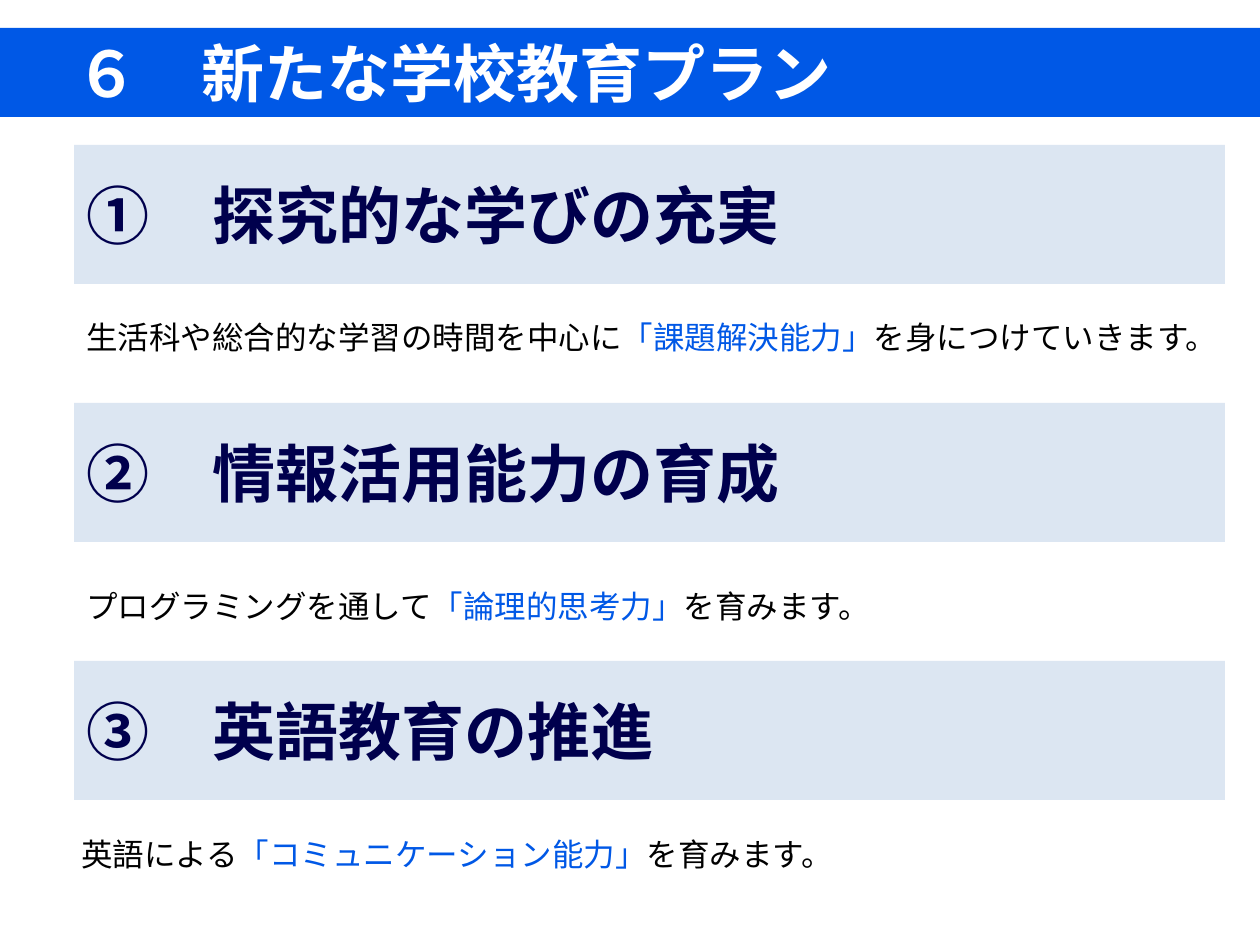
from pptx import Presentation
from pptx import util as u
from pptx.dml.color import RGBColor
from pptx.enum import shapes, text

BLUE = RGBColor(0x00, 0x58, 0xE6)
PALE = RGBColor(0xDC, 0xE6, 0xF2)
NAVY = RGBColor(0x00, 0x00, 0x4D)
WHITE = RGBColor(0xFF, 0xFF, 0xFF)
BLACK = RGBColor(0x00, 0x00, 0x00)

TITLE = "　６　新たな学校教育プラン"
# heading, (lead, key phrase, ending), body left, body top, body font
PLANS = [
    ("①　探究的な学びの充実",
     ("生活科や総合的な学習の時間を中心に", "「課題解決能力」", "を身につけていきます。"),
     74, 312, "Arial"),
    ("②　情報活用能力の育成",
     ("プログラミングを通して", "「論理的思考力」", "を育みます。"),
     74, 581, "Calibri"),
    ("③　英語教育の推進",
     ("英語による", "「コミュニケーション能力」", "を育みます。"),
     69, 829, "Calibri"),
]

SLIDE_W, SLIDE_H = 1260, 945
BAND_LEFT, BAND_TOP, BAND_W, BAND_H, BAND_STEP = 74, 145, 1151, 139, 258
BODY_H = 51


def px(count):
    return u.Emu(round(count * 914400 / 126))


def style(span, size, font, color, bold=False):
    span.font.size = u.Pt(size)
    span.font.name = font
    span.font.color.rgb = color
    span.font.bold = bold


def add_band(page, wording, area, fill, color):
    band = page.shapes.add_shape(shapes.MSO_SHAPE.RECTANGLE, *map(px, area))
    band.shadow.inherit = False
    band.fill.solid()
    band.fill.fore_color.rgb = fill
    band.line.fill.background()
    frame = band.text_frame
    frame.word_wrap = True
    frame.vertical_anchor = text.MSO_ANCHOR.MIDDLE
    para = frame.paragraphs[0]
    para.text = wording
    para.alignment = text.PP_ALIGN.LEFT
    style(para.runs[0], 36, "Lato", color, bold=True)


def add_body(page, parts, area, font):
    box = page.shapes.add_textbox(*map(px, area))
    frame = box.text_frame
    frame.word_wrap = True
    frame.auto_size = text.MSO_AUTO_SIZE.SHAPE_TO_FIT_TEXT
    para = frame.paragraphs[0]
    for part, color in zip(parts, (BLACK, BLUE, BLACK)):
        span = para.add_run()
        span.text = part
        style(span, 18, font, color)


def main():
    deck = Presentation()
    deck.slide_width, deck.slide_height = px(SLIDE_W), px(SLIDE_H)
    page = deck.slides.add_slide(deck.slide_layouts[6])

    add_band(page, TITLE, (0, 28, SLIDE_W, 89), BLUE, WHITE)
    for row, (heading, parts, left, top, font) in enumerate(PLANS):
        band_top = BAND_TOP + row * BAND_STEP
        add_band(page, heading, (BAND_LEFT, band_top, BAND_W, BAND_H), PALE, NAVY)
        add_body(page, parts, (left, top, BAND_W, BODY_H), font)

    deck.save("out.pptx")


if __name__ == "__main__":
    main()
